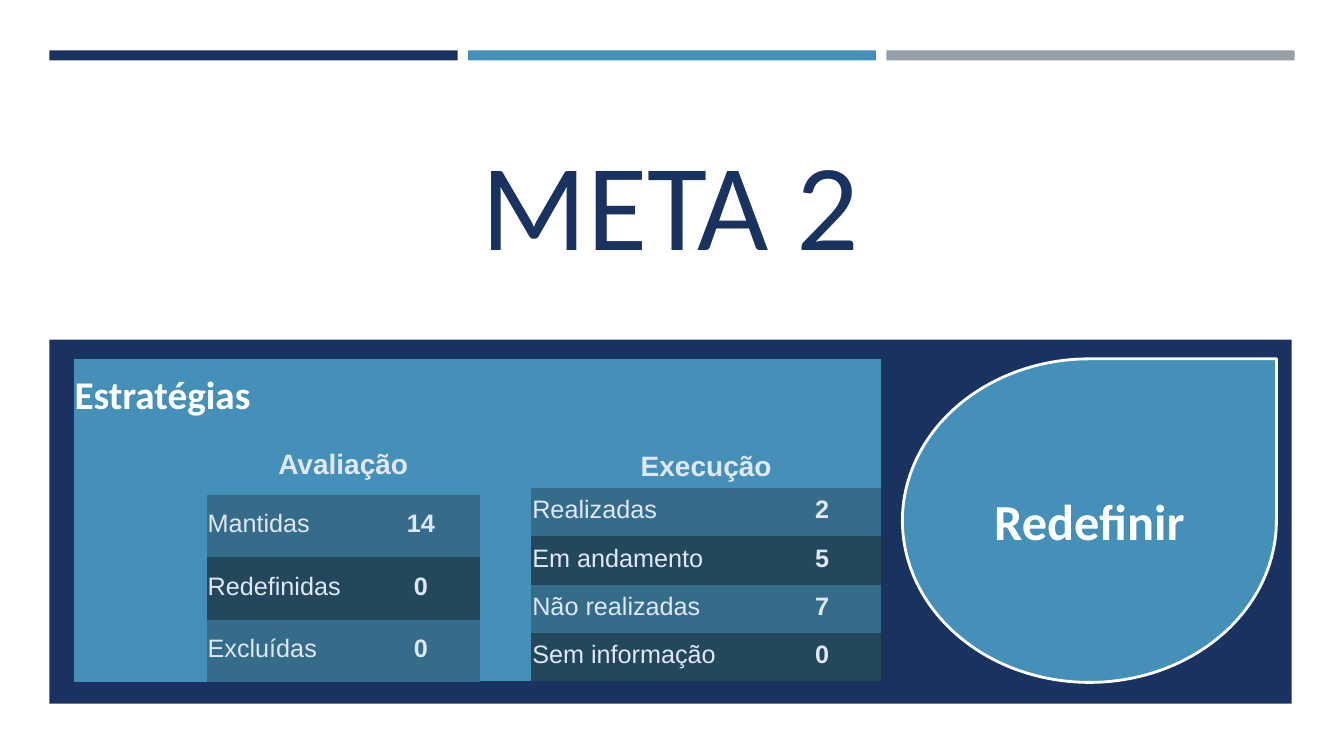
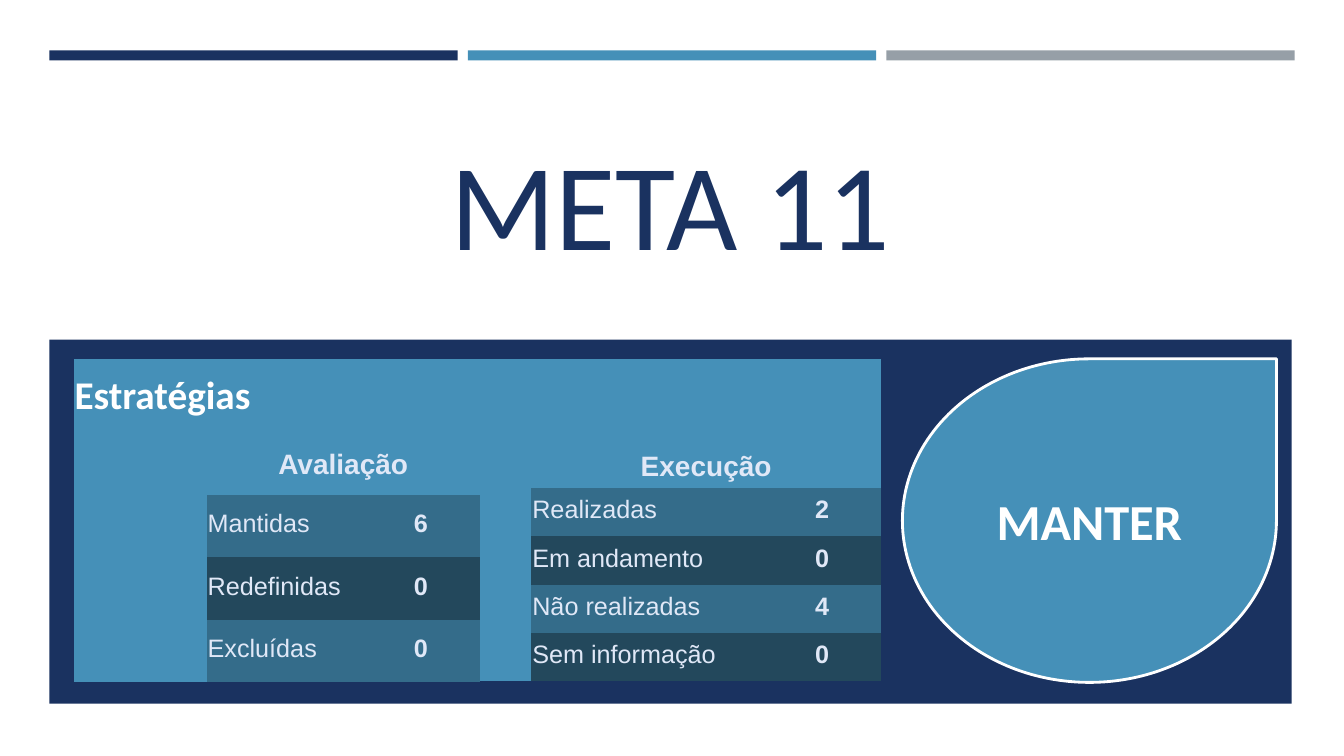
from pptx import Presentation
from pptx.dml.color import RGBColor
from pptx.enum.shapes import MSO_SHAPE
from pptx.enum.text import MSO_ANCHOR, PP_ALIGN
from pptx.oxml.ns import qn
from pptx.util import Inches, Pt

COLORS = {
    "navy": "1A3260", "blue": "4590B8", "grey": "969FA7", "white": "FFFFFF",
    "pale": "E0E8F7", "row_light": "346C8A", "row_dark": "23485C",
}
HEADING_FONT, TABLE_FONT = "Calibri", "Arial"
NO_STYLE_NO_GRID = "{2D5ABB26-0587-4C30-8999-92F81FD0307C}"

EVALUATION_LABELS = ["Mantidas", "Redefinidas", "Excluídas"]
EXECUTION_LABELS = ["Realizadas", "Em andamento", "Não realizadas", "Sem informação"]
GOALS = [
    {"title": "META 2", "evaluation": [14, 0, 0], "execution": [2, 5, 7, 0],
     "decision": "Redefinir"},
    {"title": "META 11", "evaluation": [6, 0, 0], "execution": [2, 0, 4, 0],
     "decision": "MANTER"},
]


def color(name):
    return RGBColor.from_string(COLORS[name])


def write(holder, text, size, font, color_name, bold=False, align=PP_ALIGN.LEFT):
    paragraph = holder.text_frame.paragraphs[0]
    paragraph.alignment = align
    run = paragraph.add_run()
    run.text = text
    run.font.size = Pt(size)
    run.font.name = font
    run.font.bold = bold
    run.font.color.rgb = color(color_name)


def add_filled_shape(slide, kind, box, fill):
    shape = slide.shapes.add_shape(kind, *map(Inches, box))
    shape.shadow.inherit = False
    shape.fill.solid()
    shape.fill.fore_color.rgb = color(fill)
    shape.line.fill.background()
    return shape


def add_frame(slide):
    # Three top bars
    width, gap = 4.05, 0.1
    for index, fill in enumerate(["navy", "blue", "grey"]):
        left = 0.49 + index * (width + gap)
        add_filled_shape(slide, MSO_SHAPE.RECTANGLE, (left, 0.5, width, 0.1), fill)
    # Lower panel
    add_filled_shape(slide, MSO_SHAPE.RECTANGLE, (0.49, 3.37, 12.32, 3.61), "navy")


def add_title(slide, box, text):
    title = slide.shapes.add_textbox(*map(Inches, box))
    title.text_frame.word_wrap = True
    title.text_frame.vertical_anchor = MSO_ANCHOR.BOTTOM
    title.text_frame.margin_bottom = 0
    write(title, text, 88, HEADING_FONT, "navy", align=PP_ALIGN.CENTER)


def add_table(slide, left, top, widths, heights):
    frame = slide.shapes.add_table(
        len(heights), len(widths), Inches(left), Inches(top),
        Inches(sum(widths)), Inches(sum(heights)))
    for style in frame.element.iter(qn("a:tableStyleId")):
        style.text = NO_STYLE_NO_GRID
    table = frame.table
    table.first_row = table.horz_banding = False
    for column, width in zip(table.columns, widths):
        column.width = Inches(width)
    for row, height in zip(table.rows, heights):
        row.height = Inches(height)
    for cell in table.iter_cells():
        cell.margin_left = cell.margin_right = cell.margin_top = Inches(0.01)
        cell.margin_bottom = Inches(0.05)
        cell.vertical_anchor = MSO_ANCHOR.MIDDLE
        cell.fill.solid()
        cell.fill.fore_color.rgb = color("blue")
    return table


def fill_counts(table, heading, labels, counts):
    """Heading in the second row, then banded label and count rows on the right."""
    value_column = len(table.columns) - 1
    label_column = value_column - 1
    heading_cell = table.cell(1, label_column)
    heading_cell.merge(table.cell(1, value_column))
    write(heading_cell, heading, 20, TABLE_FONT, "pale", True, PP_ALIGN.CENTER)
    for index, (label, count) in enumerate(zip(labels, counts)):
        label_cell = table.cell(index + 2, label_column)
        value_cell = table.cell(index + 2, value_column)
        for cell in (label_cell, value_cell):
            cell.fill.fore_color.rgb = color("row_dark" if index % 2 else "row_light")
        write(label_cell, label, 18, TABLE_FONT, "pale")
        write(value_cell, str(count), 18, TABLE_FONT, "pale", True, PP_ALIGN.CENTER)


def add_evaluation(slide, left, top, counts):
    table = add_table(slide, left, top, [0.44, 0.88, 1.54, 1.17],
                      [0.79, 0.56] + [0.62] * len(counts))
    table.cell(0, 0).merge(table.cell(0, 2))
    write(table.cell(0, 0), "Estratégias", 28, HEADING_FONT, "white", True)
    fill_counts(table, "Avaliação", EVALUATION_LABELS, counts)


def add_execution(slide, left, top, counts):
    table = add_table(slide, left, top, [0.51, 2.3, 1.17],
                      [0.84, 0.44] + [0.48] * len(counts))
    table.cell(0, 0).merge(table.cell(0, 1))
    fill_counts(table, "Execução", EXECUTION_LABELS, counts)
    table.cell(1, 1).vertical_anchor = MSO_ANCHOR.BOTTOM


def add_decision(slide, box, text):
    drop = add_filled_shape(slide, MSO_SHAPE.TEAR, box, "blue")
    drop.line.color.rgb = color("white")
    drop.line.width = Pt(2)
    drop.text_frame.word_wrap = True
    drop.text_frame.vertical_anchor = MSO_ANCHOR.MIDDLE
    write(drop, text, 36, HEADING_FONT, "white", True, PP_ALIGN.CENTER)


def add_goal_slide(presentation, goal):
    slide = presentation.slides.add_slide(presentation.slide_layouts[6])
    add_frame(slide)
    add_title(slide, (0.64, 1.12, 12.02, 1.61), goal["title"])
    add_evaluation(slide, 0.73, 3.56, goal["evaluation"])
    add_execution(slide, 4.76, 3.56, goal["execution"])
    add_decision(slide, (8.95, 3.56, 3.71, 3.21), goal["decision"])


def main():
    presentation = Presentation()
    presentation.slide_width = Inches(13.33)
    presentation.slide_height = Inches(7.5)
    for goal in GOALS:
        add_goal_slide(presentation, goal)
    presentation.save("out.pptx")


if __name__ == "__main__":
    main()
